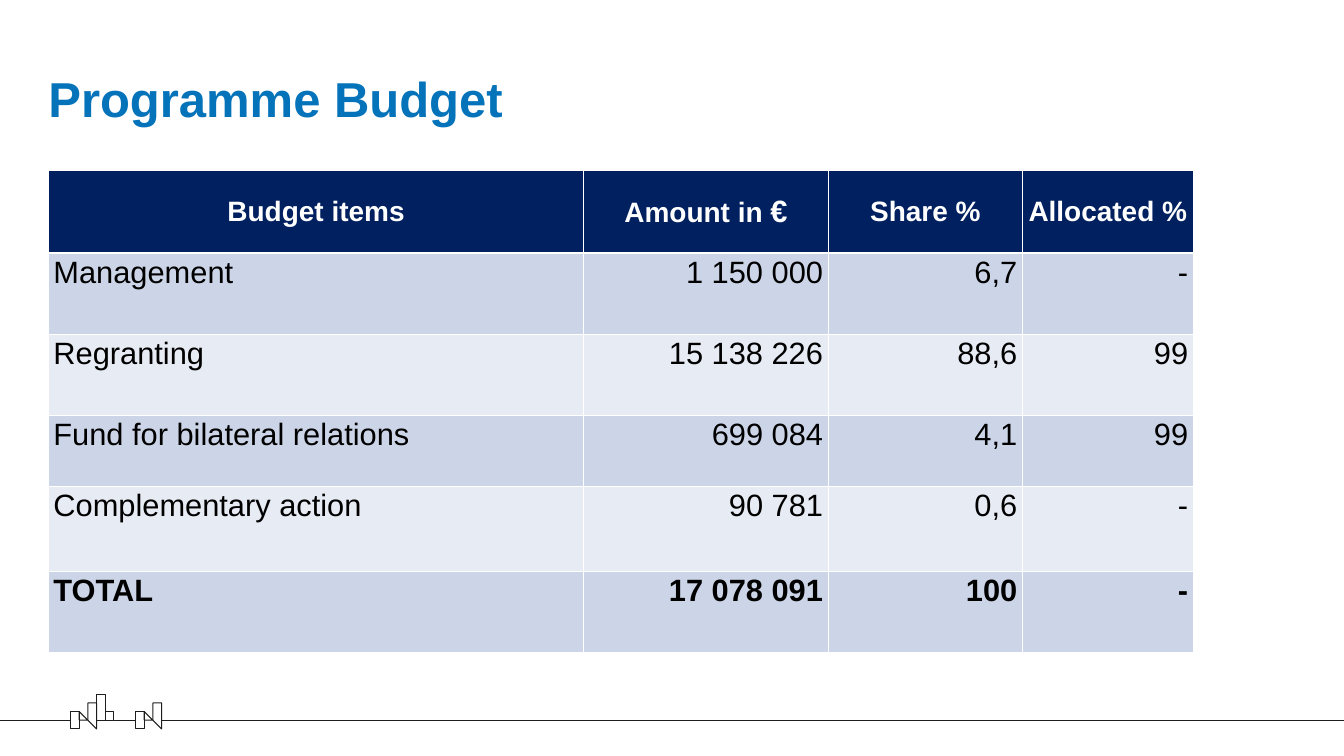
from lxml import etree
from pptx import Presentation
from pptx import util as u
from pptx.dml.color import RGBColor
from pptx.enum import shapes, text
from pptx.oxml.ns import qn

WIDTH, HEIGHT = 26.66, 15
LEFT = 0.96  # shared edge of title and table
TITLE_BLUE = RGBColor(0x05, 0x73, 0xBA)
NAVY = RGBColor(0x00, 0x20, 0x60)
BANDS = RGBColor(0xCC, 0xD5, 0xE7), RGBColor(0xE7, 0xEB, 0xF3)
WHITE = RGBColor(0xFF, 0xFF, 0xFF)
BLACK = RGBColor(0x00, 0x00, 0x00)
INK = RGBColor(0x1D, 0x1E, 0x1C)

COLUMNS = 10.62, 4.85, 3.85, 3.39
ROWS = 1.64, 1.61, 1.61, 1.41, 1.68, 1.61
BUDGET = [
    ("Budget items", "Amount in €", "Share %", "Allocated %"),
    ("Management", "1 150 000", "6,7", "-"),
    ("Regranting", "15 138 226", "88,6", "99"),
    ("Fund for bilateral relations", "699 084", "4,1", "99"),
    ("Complementary action", "90 781", "0,6", "-"),
    ("TOTAL", "17 078 091", "100", "-"),
]


class Page:
    """Current slide, its text style and the grid of the skyline."""
    font = "Arial"
    origin_x, ground, step = 1.4, 14.29, 0.86 / 5

    def __init__(self, deck):
        self.slide = deck.slides.add_slide(deck.slide_layouts[5])

    def x(self, column):
        return u.Inches(self.origin_x + column * self.step)

    def y(self, row):
        return u.Inches(self.ground - row * self.step)

    def style(self, para, size, color, bold):
        for span in para.runs:
            span.font.name = self.font
            span.font.size = u.Pt(size)
            span.font.bold = bold
            span.font.color.rgb = color

    def title(self, words, top, width, height):
        box = self.slide.shapes.title
        box.left, box.top = u.Inches(LEFT), u.Inches(top)
        box.width, box.height = u.Inches(width), u.Inches(height)
        frame = box.text_frame
        frame.margin_left = frame.margin_right = 0
        frame.margin_top = frame.margin_bottom = 0
        frame.vertical_anchor = text.MSO_ANCHOR.MIDDLE
        frame.text = words
        frame.paragraphs[0].alignment = text.PP_ALIGN.LEFT
        self.style(frame.paragraphs[0], 70, TITLE_BLUE, True)

    def borders(self, cell, bottom):
        properties = cell._tc.get_or_add_tcPr()
        sides = ("a:lnL", 1), ("a:lnR", 1), ("a:lnT", 1), ("a:lnB", bottom)
        for index, (side, points) in enumerate(sides):
            line = etree.Element(qn(side), w=str(u.Pt(points)))
            fill = etree.SubElement(line, qn("a:solidFill"))
            etree.SubElement(fill, qn("a:srgbClr"), val=str(WHITE))
            properties.insert(index, line)

    def table(self, values, top):
        grid = self.slide.shapes.add_table(
            len(ROWS), len(COLUMNS), u.Inches(LEFT), u.Inches(top),
            u.Inches(sum(COLUMNS)), u.Inches(sum(ROWS))).table
        for column, width in zip(grid.columns, COLUMNS):
            column.width = u.Inches(width)
        for row, height in zip(grid.rows, ROWS):
            row.height = u.Inches(height)
        for r, items in enumerate(values):
            for c, words in enumerate(items):
                self.cell(grid.cell(r, c), words, r, c)
        return grid

    def cell(self, cell, words, r, c):
        header, total = r == 0, r == len(ROWS) - 1
        cell.text = words
        para = cell.text_frame.paragraphs[0]
        cell.fill.solid()
        if header:
            cell.fill.fore_color.rgb = NAVY
            cell.vertical_anchor = text.MSO_ANCHOR.MIDDLE
            para.alignment = text.PP_ALIGN.CENTER
            self.style(para, 40, WHITE, True)
        else:
            cell.fill.fore_color.rgb = BANDS[(r - 1) % 2]
            para.alignment = text.PP_ALIGN.RIGHT if c else text.PP_ALIGN.LEFT
            self.style(para, 44, BLACK, total)
        self.borders(cell, 3 if header else 1)

    def outline(self, shape):
        shape.shadow.inherit = False
        shape.fill.background()
        shape.line.color.rgb = INK
        shape.line.width = u.Pt(1.5)
        return shape

    def block(self, column, bottom, top):
        return self.outline(self.slide.shapes.add_shape(
            shapes.MSO_SHAPE.RECTANGLE, self.x(column), self.y(top),
            self.x(1) - self.x(0), self.y(bottom) - self.y(top)))

    def polygon(self, points):
        start, *others = [(self.x(c), self.y(r)) for c, r in points]
        builder = self.slide.shapes.build_freeform(*start)
        builder.add_line_segments(others, close=True)
        return self.outline(builder.convert_to_shape())

    def ground_line(self, start, end, block=None):
        line = self.slide.shapes.add_connector(
            shapes.MSO_CONNECTOR.STRAIGHT, start, self.y(0), end, self.y(0))
        line.line.color.rgb = INK
        line.line.width = u.Pt(1.5)
        etree.SubElement(line._element.spPr, qn("a:effectLst"))
        if block is not None:
            line.end_connect(block, 1)

    def house(self, column):
        """Left block, sloping roof and tall slanted block."""
        c = column
        self.polygon([(c + 2, 0), (c + 1, 0), (c + 1, 1)])
        self.polygon([(c + 2, 2), (c + 2, 0), (c + 3, -1), (c + 3, 2)])
        return self.block(c, -1, 1)


def main():
    deck = Presentation()
    deck.slide_width, deck.slide_height = u.Inches(WIDTH), u.Inches(HEIGHT)
    page = Page(deck)

    # Skyline along the foot of the page
    second = 7.5
    left_house, right_house = page.house(0), page.house(second)
    page.block(3, 0, 3)
    page.block(4, 0, 1)
    page.ground_line(0, page.x(0), left_house)
    page.ground_line(page.x(5), page.x(second), right_house)
    page.ground_line(page.x(second + 3), deck.slide_width)

    # Title
    page.title("Programme Budget", 1.35, 13.43, 1.18)

    # Budget table, with a larger euro sign in its header
    budget = page.table(BUDGET, 3.38)
    para = budget.cell(0, 1).text_frame.paragraphs[0]
    para.runs[0].text = "Amount in "
    para.add_run().text = "€"
    page.style(para, 40, WHITE, True)
    para.runs[1].font.size = u.Pt(44)

    deck.save("out.pptx")


if __name__ == "__main__":
    main()
